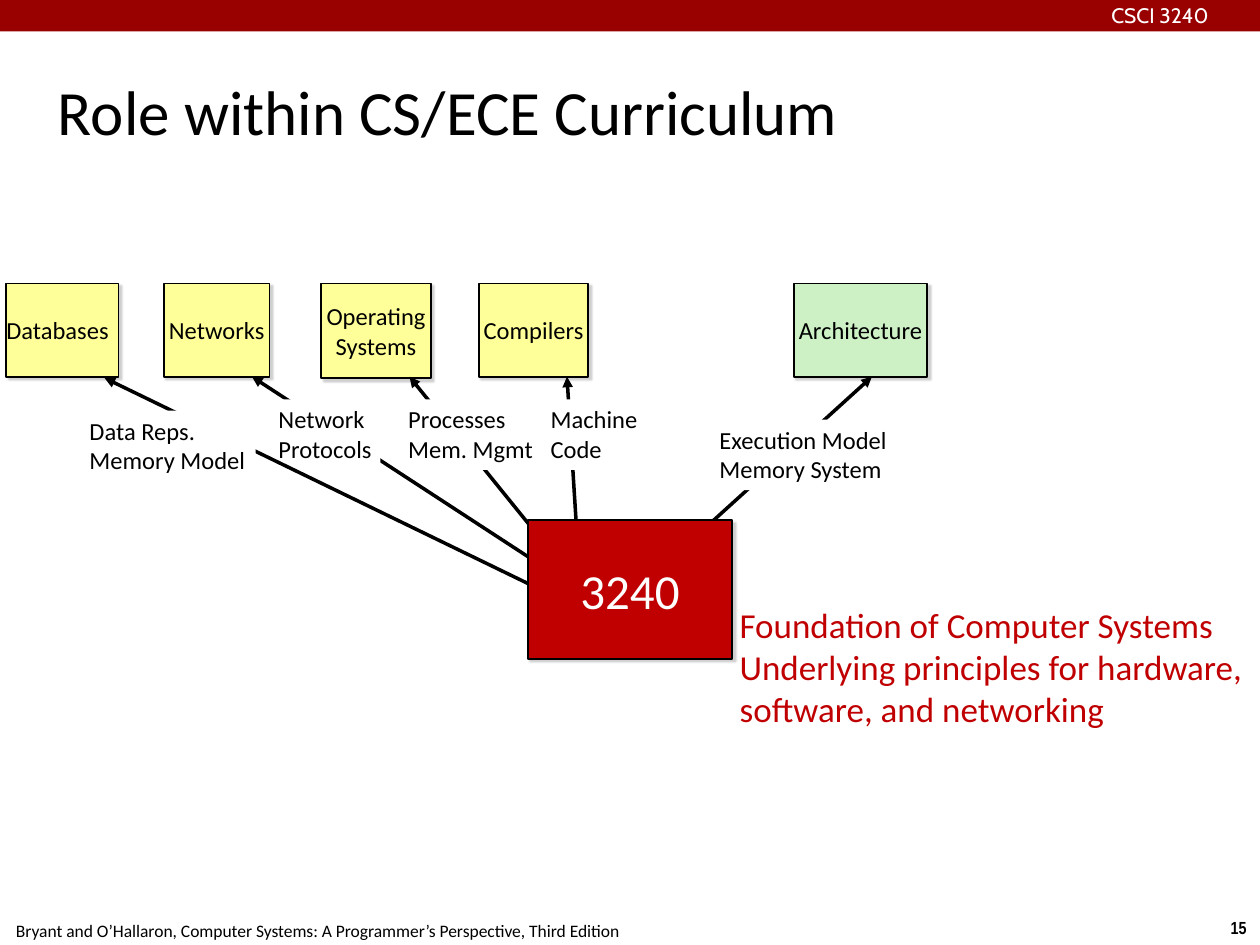
from dataclasses import dataclass

from lxml import etree
from pptx import Presentation
from pptx.dml.color import RGBColor
from pptx.enum.shapes import MSO_CONNECTOR, MSO_SHAPE
from pptx.enum.text import MSO_ANCHOR, MSO_AUTO_SIZE, PP_ALIGN
from pptx.oxml.ns import qn
from pptx.util import Pt

PX = 9144  # EMU per px, 100 px to the inch
RECTANGLE = MSO_SHAPE.RECTANGLE
STRAIGHT = MSO_CONNECTOR.STRAIGHT
TOP, MIDDLE = MSO_ANCHOR.TOP, MSO_ANCHOR.MIDDLE
LEFT, CENTER = PP_ALIGN.LEFT, PP_ALIGN.CENTER
GROW, FIXED = MSO_AUTO_SIZE.SHAPE_TO_FIT_TEXT, MSO_AUTO_SIZE.NONE


@dataclass(frozen=True)
class Theme:
    black: str = "000000"
    white: str = "FFFFFF"
    banner: str = "990000"
    course: str = "C00000"
    software: str = "FFFF99"
    hardware: str = "CDF1C5"
    shadow: str = "C0C0C0"
    body_font: str = "Calibri"
    banner_font: str = "Cabin"
    number_font: str = "Arial Narrow"
    title_size: int = 36
    course_size: int = 28
    summary_size: int = 20
    label_size: int = 14
    banner_size: int = 12
    footer_size: int = 10


class SlideBuilder:
    def __init__(self, slide, theme):
        self.slide = slide
        self.theme = theme

    def fill_text(self, shape, paragraphs, size, color=None, font=None, bold=False,
                  align=LEFT, anchor=TOP, inset=4, wrap=True, auto_size=FIXED, space_before=0):
        frame = shape.text_frame
        frame_format = {"word_wrap": wrap, "auto_size": auto_size, "vertical_anchor": anchor}
        for side in ("left", "top", "right", "bottom"):
            frame_format[f"margin_{side}"] = inset * PX
        for name, value in frame_format.items():
            setattr(frame, name, value)
        font_format = {"size": Pt(size), "name": font or self.theme.body_font, "bold": bold}
        for index, text in enumerate(paragraphs):
            paragraph = frame.add_paragraph() if index else frame.paragraphs[0]
            paragraph.text = text
            paragraph.alignment = align
            paragraph.space_before = Pt(space_before)
            for run in paragraph.runs:
                for name, value in font_format.items():
                    setattr(run.font, name, value)
                run.font.color.rgb = RGBColor.from_string(color or self.theme.black)

    def title(self, box, text):
        shape = self.slide.shapes.title
        for name, value in zip(("left", "top", "width", "height"), box):
            setattr(shape, name, value * PX)
        self.fill_text(shape, [text], self.theme.title_size, anchor=MIDDLE)
        properties = shape.text_frame.paragraphs[0]._p.get_or_add_pPr()
        properties.set("marL", str(13 * PX))
        properties.set("indent", str(-13 * PX))

    def text(self, box, paragraphs, size, **text_format):
        shape = self.slide.shapes.add_textbox(*(value * PX for value in box))
        self.fill_text(shape, paragraphs, size, **text_format)

    def rectangle(self, box, fill):
        shape = self.slide.shapes.add_shape(RECTANGLE, *(value * PX for value in box))
        shape.shadow.inherit = False
        shape.fill.solid()
        shape.fill.fore_color.rgb = RGBColor.from_string(fill)
        shape.line.fill.background()
        return shape

    def course_box(self, box, fill, paragraphs, size, **text_format):
        shape = self.rectangle(box, fill)
        shape.line.color.rgb = RGBColor.from_string(self.theme.black)
        shape.line.width = Pt(1)
        effects = shape._element.spPr.find(qn("a:effectLst"))
        shadow = etree.SubElement(effects, qn("a:outerShdw"), blurRad=str(Pt(1)),
                                  dist=str(Pt(2)), dir="2700000", algn="ctr", rotWithShape="0")
        color = etree.SubElement(shadow, qn("a:srgbClr"), val=self.theme.shadow)
        etree.SubElement(color, qn("a:alpha"), val="75000")
        self.fill_text(shape, paragraphs, size, anchor=MIDDLE, inset=0, **text_format)

    def label(self, box, paragraphs):
        shape = self.rectangle(box, self.theme.white)
        self.fill_text(shape, paragraphs, self.theme.label_size, wrap=False, auto_size=GROW)

    def arrow(self, tip, tail):
        connector = self.slide.shapes.add_connector(
            STRAIGHT, *(value * PX for value in tip + tail))
        connector.line.color.rgb = RGBColor.from_string(self.theme.black)
        connector.line.width = Pt(2)
        properties = connector._element.spPr
        etree.SubElement(properties.find(qn("a:ln")), qn("a:headEnd"), type="triangle")
        etree.SubElement(properties, qn("a:effectLst"))


def main():
    theme = Theme()
    presentation = Presentation()
    presentation.slide_width, presentation.slide_height = 1000 * PX, 750 * PX
    slide = presentation.slides.add_slide(presentation.slide_layouts[5])
    builder = SlideBuilder(slide, theme)

    # Footer
    builder.text((966, 723, 34, 27), ["15"], theme.footer_size, font=theme.number_font,
                 bold=True, align=CENTER, inset=5, wrap=False, auto_size=GROW)
    builder.text((-2, 725, 508, 27),
                 ["Bryant and O’Hallaron, Computer Systems: A Programmer’s Perspective, Third Edition"],
                 theme.footer_size, align=CENTER, inset=5, wrap=False, auto_size=GROW)

    # Banner and title
    builder.rectangle((0, 0, 1001, 25), theme.banner)
    builder.text((882, 2, 144, 19), ["CSCI 3240"], theme.banner_size,
                 color=theme.white, font=theme.banner_font, inset=0)
    builder.title((42, 28, 917, 119), "Role within CS/ECE Curriculum")

    # Later courses: left, width, height, fill, alignment, name
    courses = [
        (5, 89, 74, theme.software, LEFT, ["Databases"]),
        (130, 84, 74, theme.software, CENTER, ["Networks"]),
        (255, 87, 75, theme.software, CENTER, ["Operating", "Systems"]),
        (380, 87, 74, theme.software, CENTER, ["Compilers"]),
        (630, 106, 74, theme.hardware, CENTER, ["Architecture"]),
    ]
    for left, width, height, fill, align, name in courses:
        builder.course_box((left, 225, width, height), fill, name, theme.label_size,
                           align=align, wrap=False)

    # Arrows to the courses, each with the topic it carries; labels cover their arrow
    topics = [
        ((200, 299), (427, 447), (217, 317, 85, 56), ["Network", "Protocols"]),
        ((325, 299), (427, 425), (320, 317, 110, 56), ["Processes", "Mem. Mgmt"]),
        ((450, 299), (458, 426), (433, 317, 80, 56), ["Machine", "Code"]),
        ((83, 300), (427, 467), (67, 326, 136, 56), ["Data Reps.", "Memory Model"]),
        ((692, 299), (552, 426), (567, 333, 145, 56), ["Execution Model", "Memory System"]),
    ]
    for tip, tail, box, topic in topics:
        builder.arrow(tip, tail)
        builder.label(box, topic)

    # Foundation course and its summary
    builder.course_box((419, 413, 162, 110), theme.course, ["3240"], theme.course_size,
                       color=theme.white, align=CENTER)
    builder.text((583, 475, 426, 108),
                 ["Foundation of Computer Systems\vUnderlying principles for hardware,\v"
                  "software, and networking"],
                 theme.summary_size, color=theme.course, space_before=4.8)

    presentation.save("out.pptx")


if __name__ == "__main__":
    main()
